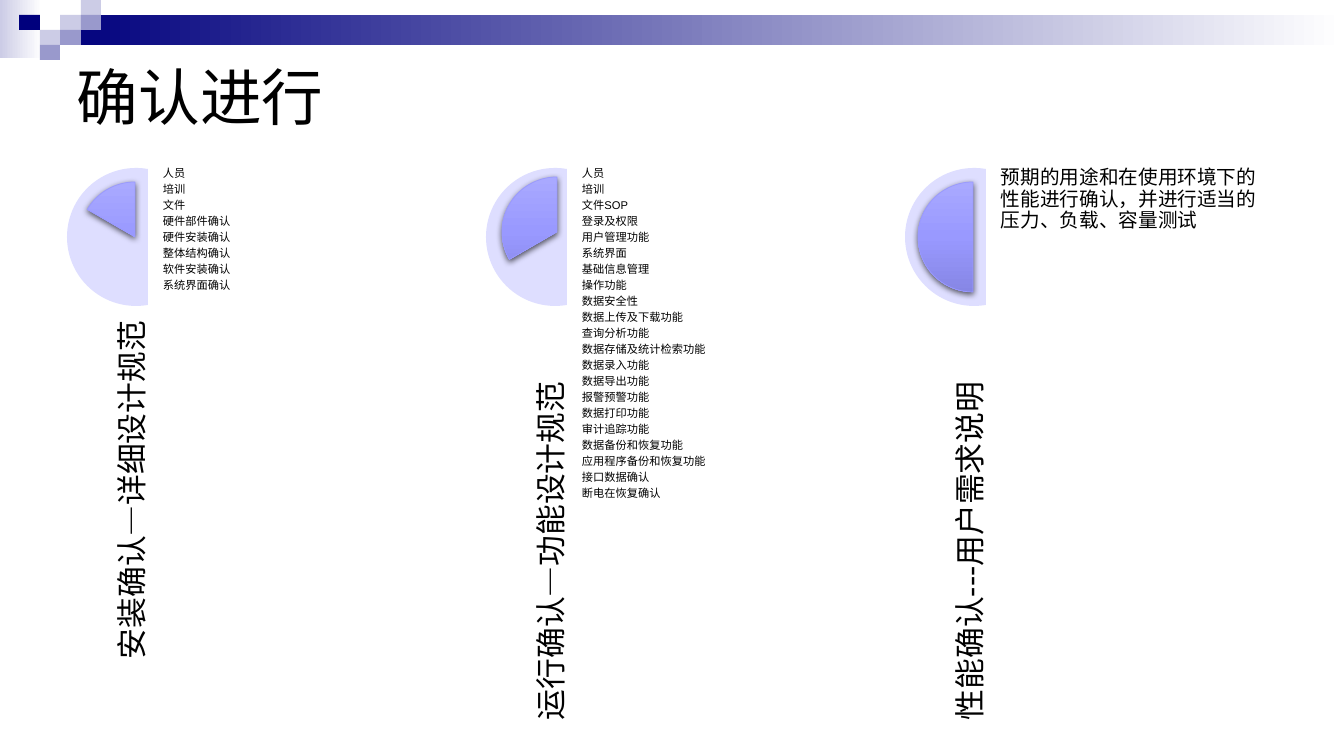
from pptx import Presentation
from pptx.dml.color import RGBColor
from pptx.enum.shapes import MSO_SHAPE as SHAPE
from pptx.enum.text import MSO_ANCHOR as ANCHOR, PP_ALIGN as ALIGN
from pptx.oxml import parse_xml
from pptx.oxml.ns import nsdecls, qn
from pptx.util import Pt

TITLE = "确认进行"
COLUMNS = [
    {
        "label": "安装确认—详细设计规范", "align": ALIGN.RIGHT,
        "pie": (13, 182), "start": 210, "size": 8,
        "items": ["人员", "培训", "文件", "硬件部件确认", "硬件安装确认",
                  "整体结构确认", "软件安装确认", "系统界面确认"],
    },
    {
        "label": "运行确认—功能设计规范", "align": ALIGN.LEFT,
        "pie": (16, 177), "start": 150, "size": 8,
        "items": ["人员", "培训", "文件SOP", "登录及权限", "用户管理功能",
                  "系统界面", "基础信息管理", "操作功能", "数据安全性",
                  "数据上传及下载功能", "查询分析功能", "数据存储及统计检索功能",
                  "数据录入功能", "数据导出功能", "报警预警功能", "数据打印功能",
                  "审计追踪功能", "数据备份和恢复功能", "应用程序备份和恢复功能",
                  "接口数据确认", "断电在恢复确认"],
    },
    {
        "label": "性能确认---用户需求说明", "align": ALIGN.LEFT,
        "pie": (13, 182), "start": 90, "size": 14,
        "items": ["预期的用途和在使用环境下的性能进行确认，并进行适当的压力、负载、容量测试"],
    },
]
COLORS = {
    "navy": "00007D", "mid": "9999CC", "pale": "CCCCE6", "white": "FFFFFF",
    "disc": "DEDEFF", "pie_top": "A9A9FF", "pie": "9999FF", "pie_low": "8686E5",
    "text": "000000",
}
GRID_X = [0, 19, 40, 60, 81, 101]
GRID_Y = [0, 15, 30, 45, 60]
MOSAIC = [(3, 1, "pale"), (4, 0, "pale"), (4, 1, "mid"), (2, 2, "pale"),
          (1, 1, "navy"), (3, 2, "mid"), (2, 3, "mid")]
LEFT, TOP, PITCH = 67, 168, 419
DISC, PIE = 138, 110
SCALE = 914400 / 100.8


def px(*values):
    return [round(v * SCALE) for v in values]


def rgb(name):
    return RGBColor.from_string(COLORS[name])


def add_shape(kind, box, color=None, angles=()):
    sp = slide.shapes.add_shape(kind, *px(*box))
    sp.shadow.inherit = False
    sp.line.fill.background()
    for i, degrees in enumerate(angles):
        sp.adjustments[i] = degrees * 0.6
    if color:
        sp.fill.solid()
        sp.fill.fore_color.rgb = rgb(color)
    return sp


def set_gradient(sp, stops, angle):
    sp.fill.gradient()
    sp.fill.gradient_angle = angle
    gs_list = next(sp._element.iter(qn("a:gsLst")))
    gs_list.clear()
    for position, name in stops:
        gs_list.append(parse_xml(
            f'<a:gs {nsdecls("a")} pos="{position * 1000}">'
            f'<a:srgbClr val="{COLORS[name]}"/></a:gs>'))


def add_shadow(sp):
    effects = next(sp._element.iter(qn("a:effectLst")))
    effects.append(parse_xml(
        f'<a:outerShdw {nsdecls("a")} blurRad="{Pt(4.5)}" dist="{Pt(1.5)}" '
        'dir="5400000" rotWithShape="0"><a:srgbClr val="000000">'
        '<a:alpha val="63000"/></a:srgbClr></a:outerShdw>'))


def add_text(box, lines, size, anchor=ANCHOR.TOP, align=ALIGN.LEFT):
    sp = slide.shapes.add_textbox(*px(*box))
    tf = sp.text_frame
    tf.word_wrap = True
    tf.vertical_anchor = anchor
    tf.text = "\n".join(lines)
    for p in tf.paragraphs:
        p.alignment = align
        p.font.size = Pt(size)
        p.font.name = "Arial"
        p.font.color.rgb = rgb("text")
    return sp


def add_body(box, lines, size, **options):
    sp = add_text(box, lines, size, **options)
    tf = sp.text_frame
    tf.margin_left = tf.margin_top = tf.margin_right = tf.margin_bottom = 0
    for p in tf.paragraphs:
        p.line_spacing = 0.9
        p.space_after = Pt(size * 0.35)
    return sp


def add_header():
    for box, first in [((0, 0, 42, 58), "pale"), ((60, 15, 1284, 30), "navy")]:
        set_gradient(add_shape(SHAPE.RECTANGLE, box), [(0, first), (100, "white")], 0)
    for col, row, color in MOSAIC:
        x, y = GRID_X[col], GRID_Y[row]
        add_shape(SHAPE.RECTANGLE,
                  (x, y, GRID_X[col + 1] - x, GRID_Y[row + 1] - y), color)
    add_text((67, 50, 1210, 92), [TITLE], 44, anchor=ANCHOR.MIDDLE)


def add_column(x, column):
    add_shape(SHAPE.CHORD, (x, TOP, DISC, DISC), "disc", (80, 280))
    dx, y = column["pie"]
    pie = add_shape(SHAPE.PIE, (x + dx, y, PIE, PIE), angles=(column["start"], 270))
    set_gradient(pie, [(0, "pie_top"), (50, "pie"), (100, "pie_low")], 270)
    pie.line.color.rgb = rgb("pie")
    pie.line.width = Pt(0.5)
    add_shadow(pie)
    label = add_body((x - 158, 479, 399, 83), [column["label"]], 22,
                     anchor=ANCHOR.BOTTOM, align=column["align"])
    label.rotation = 270
    add_body((x + 96, TOP, 275, 551), column["items"], column["size"])


prs = Presentation()
prs.slide_width, prs.slide_height = px(1344, 756)
slide = prs.slides.add_slide(prs.slide_layouts[6])
add_header()
for i, column in enumerate(COLUMNS):
    add_column(LEFT + i * PITCH, column)
prs.save("out.pptx")
